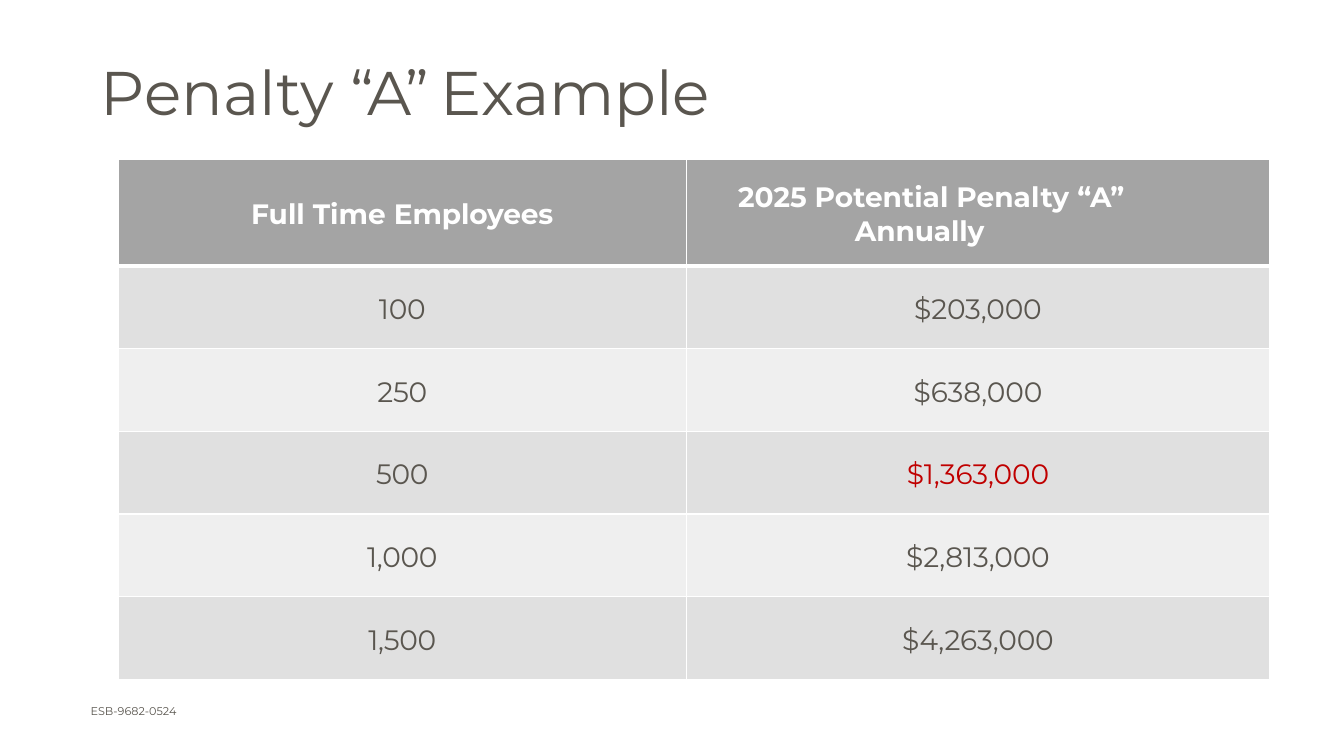
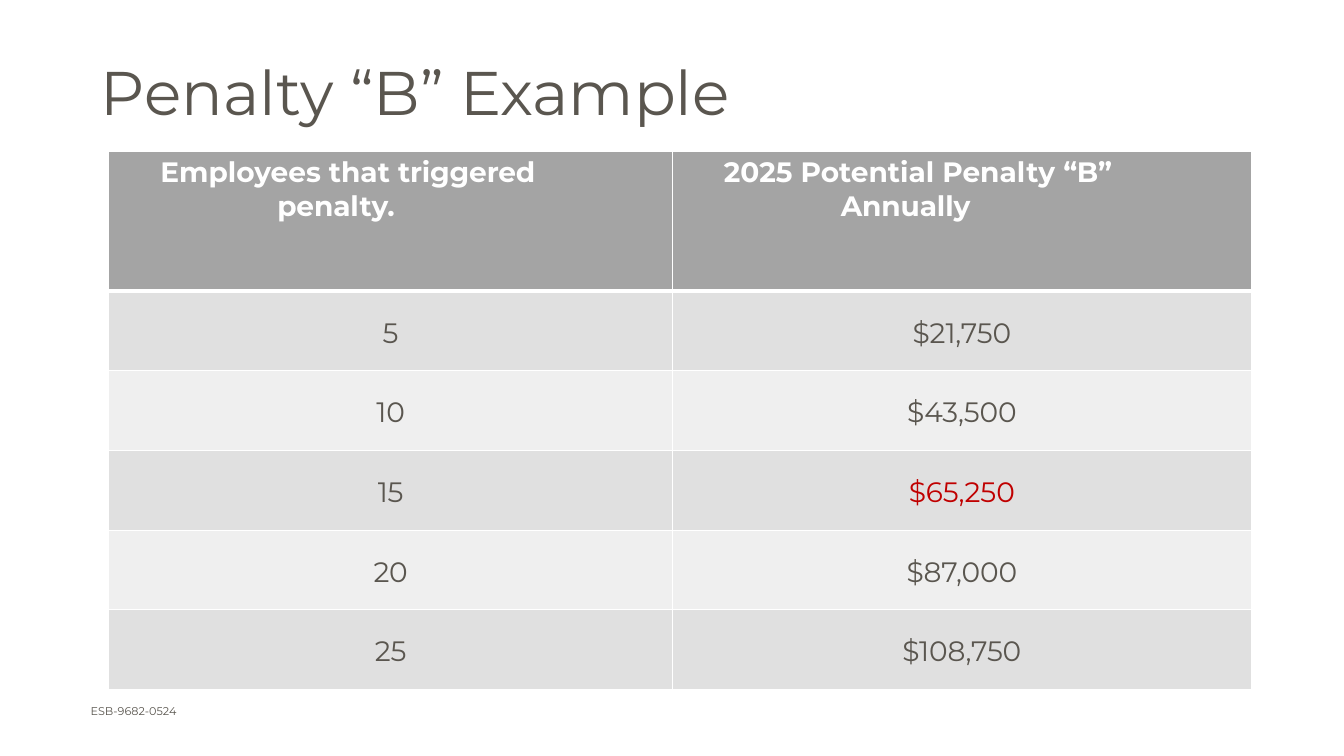
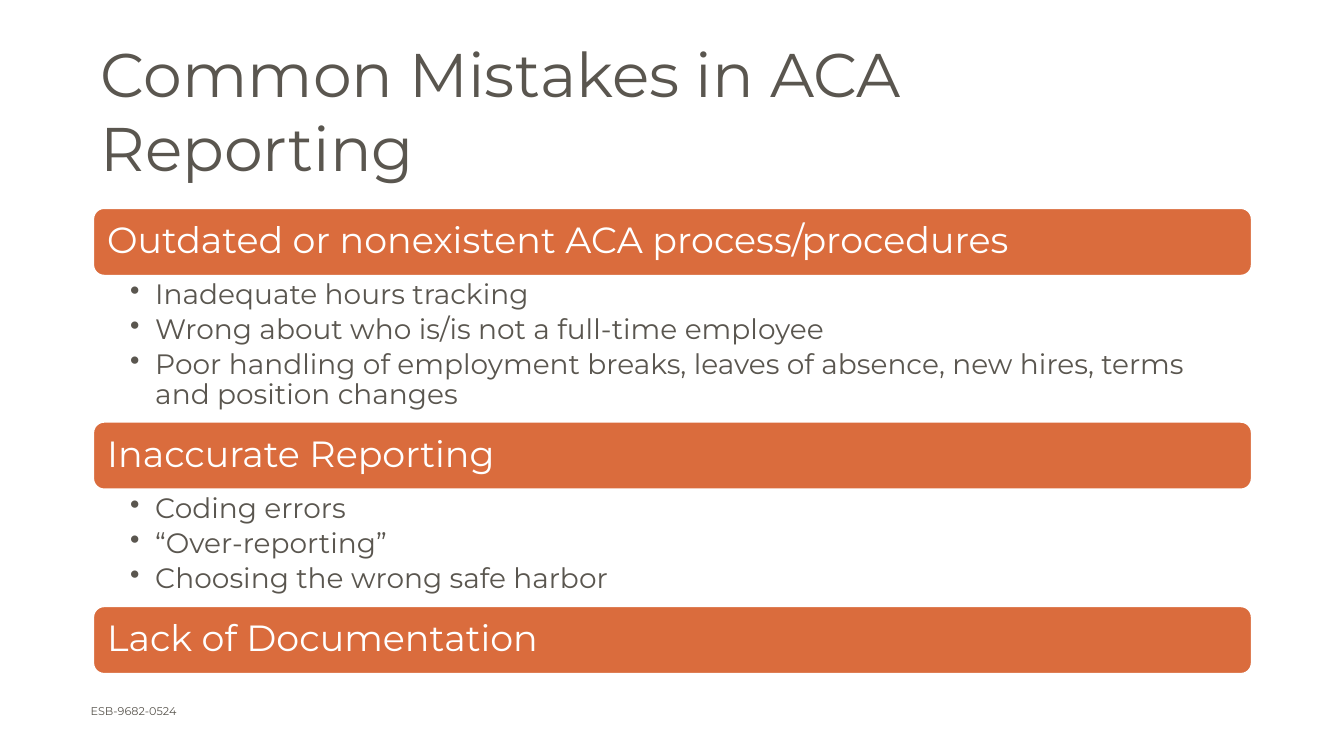
from dataclasses import dataclass

from pptx import Presentation
from pptx.dml.color import RGBColor
from pptx.enum.shapes import MSO_SHAPE
from pptx.enum.text import MSO_ANCHOR, PP_ALIGN
from pptx.oxml.ns import qn
from pptx.util import Pt
from lxml import etree

ROUND_RECT = MSO_SHAPE.ROUNDED_RECTANGLE
TOP, MIDDLE = MSO_ANCHOR.TOP, MSO_ANCHOR.MIDDLE
LEFT, CENTER = PP_ALIGN.LEFT, PP_ALIGN.CENTER
EMU_PER_PX = 9144


@dataclass(frozen=True)
class Theme:
    """Colours, font and type sizes of the deck."""
    font: str = "Montserrat"
    text: str = "5A564F"
    white: str = "FFFFFF"
    accent: str = "DA6C3D"
    alert: str = "C00000"
    header: str = "A4A4A4"
    bands: tuple = ("E0E0E0", "EFEFEF")
    title_size: int = 44
    bar_size: int = 26
    body_size: int = 20
    footer_size: int = 8


T = Theme()


def px(n):
    """Turn px into EMU."""
    return n * EMU_PER_PX


def rgb(value):
    """Turn a hex string into a colour."""
    return RGBColor.from_string(value)


def add_run(p, text, size, color, bold=False, spacing=0):
    """Add one styled run; spacing is in hundredths of a point."""
    r = p.add_run()
    r.text = text
    r.font.name, r.font.size, r.font.bold = T.font, Pt(size), bold
    r.font.color.rgb = rgb(color)
    if spacing:
        r._r.get_or_add_rPr().set("spc", str(spacing))


def set_frame(tf, margins, anchor=TOP):
    """Set wrapping, anchor and the left, top, right, bottom margins."""
    tf.word_wrap = True
    tf.vertical_anchor = anchor
    (tf.margin_left, tf.margin_top,
     tf.margin_right, tf.margin_bottom) = map(px, margins)


def set_indent(p, left, first):
    """Set the paragraph's left margin and first-line indent."""
    pPr = p._p.get_or_add_pPr()
    pPr.set("marL", str(px(left)))
    pPr.set("indent", str(px(first)))
    return pPr


def add_text_box(s, box, margins):
    """Add a text box and return its text frame."""
    tf = s.shapes.add_textbox(*map(px, box)).text_frame
    set_frame(tf, margins)
    return tf


def add_base_slide(prs, title_runs, title_inset=0):
    """Add a blank slide with the shared footer and title."""
    s = prs.slides.add_slide(prs.slide_layouts[6])
    footer = add_text_box(s, (80, 694, 667, 24), (10, 5, 10, 5))
    add_run(footer.paragraphs[0], "ESB-9682-0524", T.footer_size, T.text)
    title = add_text_box(s, (100, 36, 1080, 91), (0, title_inset, 0, 0))
    for text, spacing in title_runs:
        add_run(title.paragraphs[0], text, T.title_size, T.text, spacing=spacing)
    return s


def set_borders(cell, top, bottom):
    """Draw white cell borders, with the given top and bottom widths."""
    tcPr = cell._tc.get_or_add_tcPr()
    for side, width in (("L", 1), ("R", 1), ("T", top), ("B", bottom)):
        ln = etree.SubElement(tcPr, qn(f"a:ln{side}"), w=str(Pt(width)))
        fill = etree.SubElement(ln, qn("a:solidFill"))
        etree.SubElement(fill, qn("a:srgbClr"), val=T.white)


def style_cell(cell, fill, anchor, right=0, top=1, bottom=1):
    """Set borders, fill, anchor and margins of a cell, and return its paragraph."""
    set_borders(cell, top, bottom)
    cell.fill.solid()
    cell.fill.fore_color.rgb = rgb(fill)
    cell.vertical_anchor = anchor
    cell.margin_left = cell.margin_bottom = 0
    cell.margin_top, cell.margin_right = px(4), px(right)
    return cell.text_frame.paragraphs[0]


def add_penalty_table(s, origin, widths, heights, headers, rows, alert_row,
                      anchor=TOP):
    """Add a penalty table; each header is (hanging, runs)."""
    header_h, row_h = heights
    size = (sum(widths), header_h + row_h * len(rows))
    table = s.shapes.add_table(len(rows) + 1, len(widths),
                               *map(px, origin + size)).table
    for column, width in zip(table.columns, widths):
        column.width = px(width)
    for i, row in enumerate(table.rows):
        row.height = px(row_h if i else header_h)
    for j, (hanging, runs) in enumerate(headers):
        p = style_cell(table.cell(0, j), T.header, anchor,
                       right=50 if hanging else 0, bottom=3)
        p.alignment = LEFT if hanging else CENTER
        if hanging:
            set_indent(p, 167, -116)
        for text, spacing in runs:
            add_run(p, text, T.body_size, T.white, True, spacing)
    for i, values in enumerate(rows, 1):
        for j, value in enumerate(values):
            p = style_cell(table.cell(i, j), T.bands[(i - 1) % 2], MIDDLE,
                           top=3 if i == 1 else 1)
            p.alignment = CENTER
            color = T.alert if j == 1 and i == alert_row else T.text
            add_run(p, value, T.body_size, color, spacing=-10 if j else -20)


def add_bar(s, y, height, text):
    """Add a rounded heading bar."""
    sp = s.shapes.add_shape(ROUND_RECT, *map(px, (92, y, 1150, height)))
    sp.shadow.inherit = False
    sp.fill.solid()
    sp.fill.fore_color.rgb = rgb(T.accent)
    sp.line.color.rgb = rgb(T.white)
    sp.line.width = Pt(2)
    set_frame(sp.text_frame, (11, 11, 11, 11), MIDDLE)
    p = sp.text_frame.paragraphs[0]
    p.alignment, p.line_spacing = LEFT, 0.9
    add_run(p, text, T.bar_size, T.white)


def add_bullets(s, y, height, items):
    """Add a bulleted list below a bar."""
    tf = add_text_box(s, (92, y, 1150, height), (37, 4, 20, 4))
    for i, item in enumerate(items):
        p = tf.add_paragraph() if i else tf.paragraphs[0]
        pPr = set_indent(p, 25, -25)
        etree.SubElement(pPr, qn("a:buChar"), char="•")
        p.line_spacing, p.space_after = 0.9, Pt(3.4)
        add_run(p, item, T.body_size, T.text)


def add_sections(s, y, bar_height, sections):
    """Stack heading bars, each followed by its list."""
    for heading, height, items in sections:
        add_bar(s, y, bar_height, heading)
        y += bar_height
        if items:
            add_bullets(s, y, height, items)
            y += height


def penalty_header(letter):
    """Return the hanging header of an annual penalty column."""
    return True, [("2025 Potential Penalty ", 0), (f"“{letter}” ", -20),
                  ("Annually", -10)]


def main():
    """Build and save the deck."""
    prs = Presentation()
    prs.slide_width, prs.slide_height = px(1333), px(750)

    s = add_base_slide(prs, [("Penalty ", 0), ("“A” ", -310), ("Example", -10)], 17)
    add_penalty_table(
        s, (117, 158), (564, 578), (106, 82),
        [(False, [("Full Time ", 0), ("Employees", -10)]), penalty_header("A")],
        [("100", "$203,000"), ("250", "$638,000"), ("500", "$1,363,000"),
         ("1,000", "$2,813,000"), ("1,500", "$4,263,000")],
        alert_row=3, anchor=MIDDLE)

    s = add_base_slide(prs, [("Penalty “B” ", 0), ("Example", -10)], 17)
    add_penalty_table(
        s, (108, 150), (559, 574), (139, 79),
        [(True, [("Employees that ", 0), ("triggered penalty.", -10)]),
         penalty_header("B")],
        [("5", "$21,750"), ("10", "$43,500"), ("15", "$65,250"),
         ("20", "$87,000"), ("25", "$108,750")],
        alert_row=3)

    s = add_base_slide(prs, [("Common Mistakes in ACA Reporting", 0)])
    add_sections(s, 206, 68, [
        ("Outdated or nonexistent ACA process/procedures", 144, [
            "Inadequate hours tracking",
            "Wrong about who is/is not a full-time employee",
            "Poor handling of employment breaks, leaves of absence, new hires, "
            "terms and position changes"]),
        ("Inaccurate Reporting", 115, [
            "Coding errors",
            "“Over-reporting”",
            "Choosing the wrong safe harbor"]),
        ("Lack of Documentation", 0, []),
    ])

    prs.save("out.pptx")


if __name__ == "__main__":
    main()
